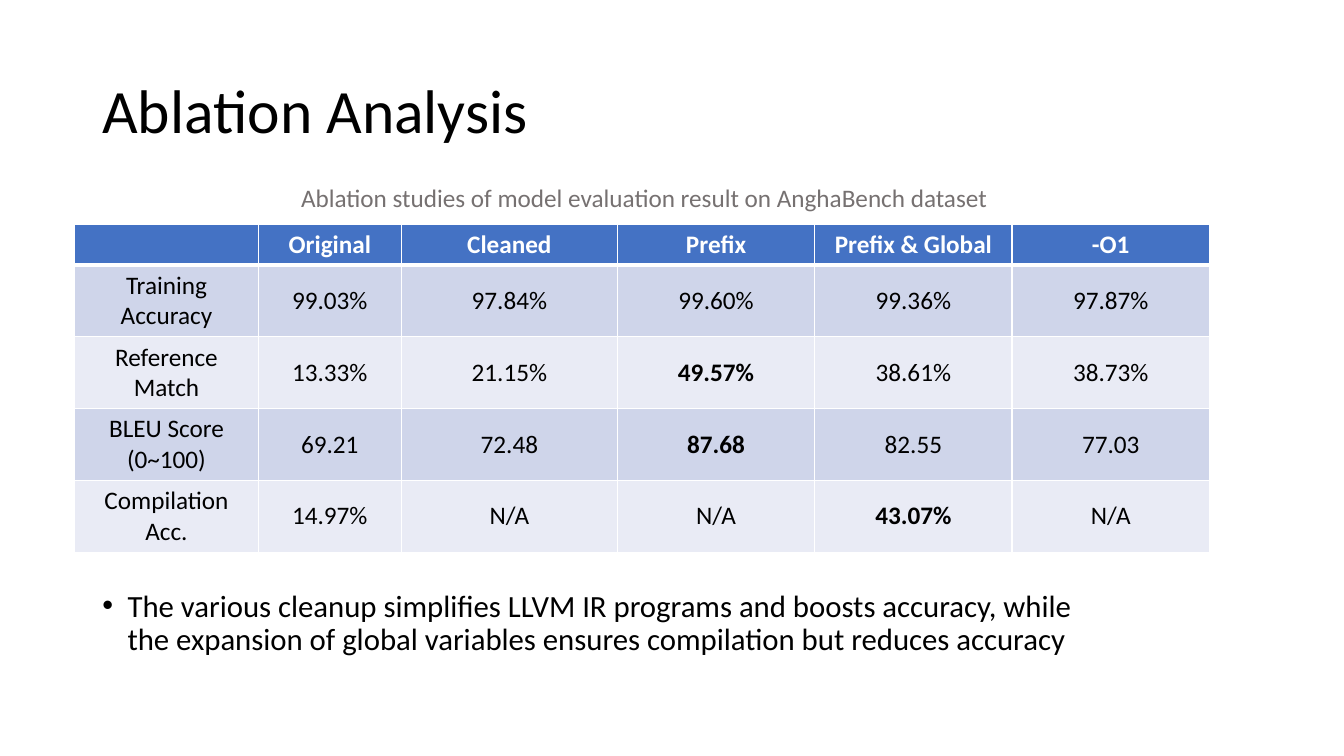
from lxml import etree
from pptx import Presentation
from pptx import util as u
from pptx.dml.color import RGBColor
from pptx.enum import text
from pptx.oxml import ns

COLUMNS, ROWS = 160, 90
WIDTH, HEIGHT = u.Inches(13.33), u.Inches(7.5)

HEADINGS = ["", "Original", "Cleaned", "Prefix", "Prefix & Global", "-O1"]
RESULTS = [
    ["Training Accuracy", "99.03%", "97.84%", "99.60%", "99.36%", "97.87%"],
    ["Reference Match", "13.33%", "21.15%", "49.57%", "38.61%", "38.73%"],
    ["BLEU Score (0~100)", "69.21", "72.48", "87.68", "82.55", "77.03"],
    ["Compilation Acc.", "14.97%", "N/A", "N/A", "43.07%", "N/A"],
]
BEST = {"49.57%", "87.68", "43.07%"}


def color(value):
    return RGBColor.from_string(value)


def across(columns):
    return round(WIDTH * columns / COLUMNS)


def down(rows):
    return round(HEIGHT * rows / ROWS)


class Deck:
    font = "Calibri"
    ink, white, muted = "000000", "FFFFFF", "767171"
    header, bands = "4472C4", ("CFD5EA", "E9EBF5")

    def __init__(self):
        self.show = Presentation()
        self.show.slide_width, self.show.slide_height = WIDTH, HEIGHT
        self.slide = self.show.slides.add_slide(self.show.slide_layouts[6])

    def format(self, paragraph, size, shade, bold=False):
        for run in paragraph.runs:
            run.font.name, run.font.size = self.font, u.Pt(size)
            run.font.bold = bold
            run.font.color.rgb = color(shade)

    def words(self, content, left, top, width, height, size, shade=ink,
              anchor=text.MSO_ANCHOR.TOP, align=text.PP_ALIGN.LEFT, spacing=1.0):
        box = self.slide.shapes.add_textbox(
            across(left), down(top), across(width), down(height))
        frame = box.text_frame
        frame.word_wrap = True
        frame.vertical_anchor = anchor
        frame.text = content
        paragraph = frame.paragraphs[0]
        paragraph.alignment, paragraph.line_spacing = align, spacing
        self.format(paragraph, size, shade)
        return paragraph

    def bullet(self, content, *place, size):
        properties = self.words(content, *place, size, spacing=0.9)._p.get_or_add_pPr()
        indent = u.Inches(0.25)
        properties.set("marL", str(indent))
        properties.set("indent", str(-indent))
        etree.SubElement(properties, ns.qn("a:buFont"), typeface="Arial")
        etree.SubElement(properties, ns.qn("a:buChar"), char="•")

    def border(self, cell, **points):
        """Rule the cell's sides, named L, R, T and B, in white."""
        properties = cell._tc.get_or_add_tcPr()
        for side, width in points.items():
            line = etree.SubElement(properties, ns.qn(f"a:ln{side}"), w=str(u.Pt(width)))
            fill = etree.SubElement(line, ns.qn("a:solidFill"))
            etree.SubElement(fill, ns.qn("a:srgbClr"), val=self.white)

    def table(self, lines, left, top, widths, heights, size, strong):
        grid = self.slide.shapes.add_table(
            len(lines), len(widths), across(left), down(top),
            across(sum(widths)), down(sum(heights))).table
        for column, width in zip(grid.columns, widths):
            column.width = across(width)
        for number, (row, height, line) in enumerate(zip(grid.rows, heights, lines)):
            row.height = down(height)
            heading = number == 0
            for cell, content in zip(row.cells, line):
                self.border(cell, L=1, R=1, T=3 if number == 1 else 1, B=3 if heading else 1)
                cell.fill.solid()
                cell.fill.fore_color.rgb = color(
                    self.header if heading else self.bands[(number - 1) % 2])
                cell.vertical_anchor = text.MSO_ANCHOR.MIDDLE
                cell.text_frame.text = content
                paragraph = cell.text_frame.paragraphs[0]
                paragraph.alignment = text.PP_ALIGN.CENTER
                self.format(paragraph, size, self.white if heading else self.ink,
                            heading or content in strong)


def main():
    deck = Deck()
    deck.words("Ablation Analysis", 11, 4.8, 138, 17.4, 44,
               anchor=text.MSO_ANCHOR.MIDDLE, spacing=0.9)
    deck.table([HEADINGS, *RESULTS], 8.9, 26.75,
               widths=[21.85, 17.05, 25.7] + [23.5] * 3,
               heights=[4.8] + [8.55] * len(RESULTS), size=18, strong=BEST)
    deck.words("Ablation studies of model evaluation result on AnghaBench dataset",
               15.4, 21.1, 122.6, 4.8, 18, deck.muted, align=text.PP_ALIGN.CENTER)
    deck.bullet("The various cleanup simplifies LLVM IR programs and boosts accuracy, "
                "while the expansion of global variables ensures compilation "
                "but reduces accuracy", 11, 69.7, 122.9, 20.3, size=22)
    deck.show.save("out.pptx")


if __name__ == "__main__":
    main()
